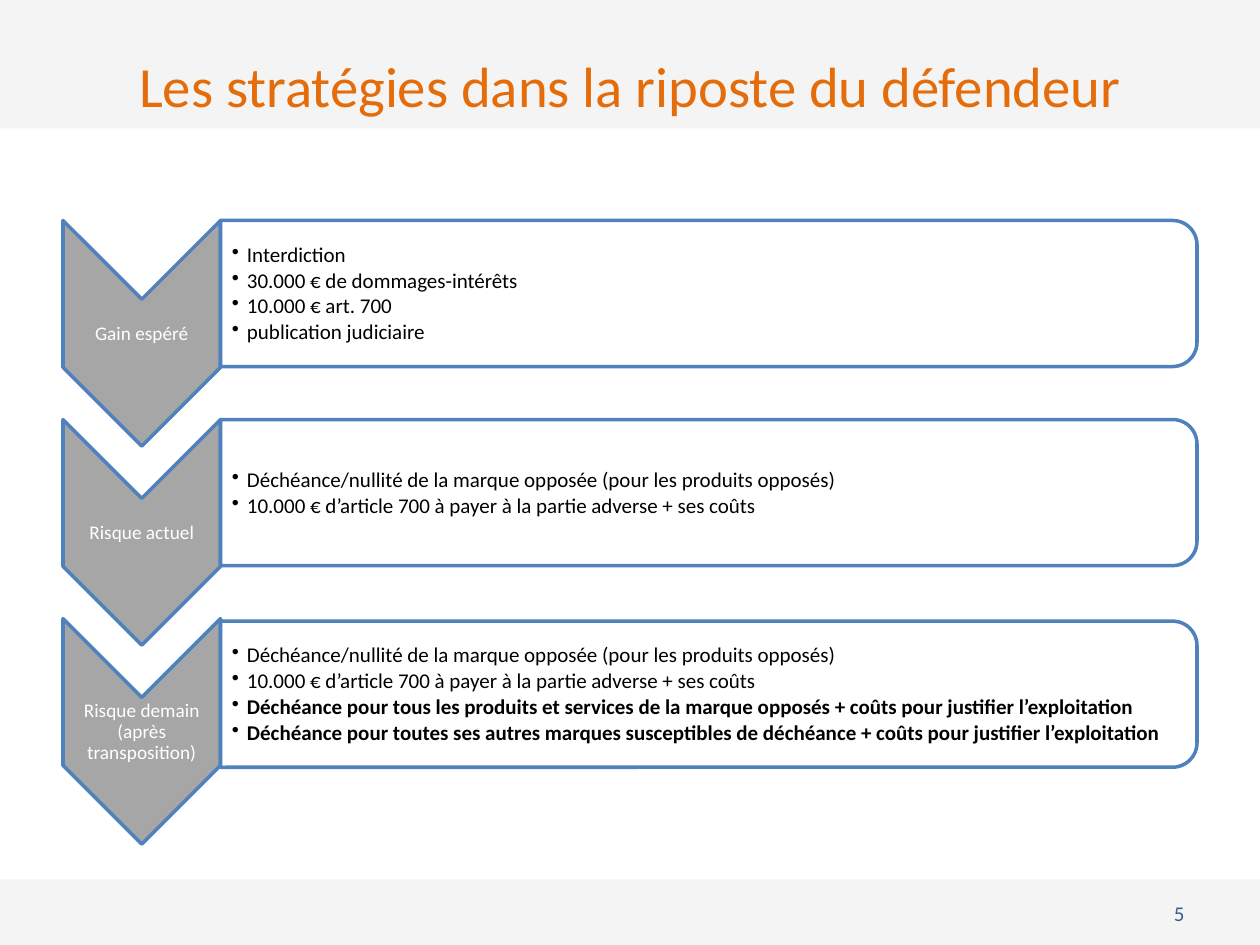
"""Build the slide on the defendant's strategies: three stages, each with its points."""
from dataclasses import dataclass

from lxml.etree import SubElement
from pptx import Presentation
from pptx.dml.color import RGBColor
from pptx.enum.shapes import MSO_SHAPE
from pptx.enum.text import MSO_ANCHOR, PP_ALIGN
from pptx.oxml.ns import qn
from pptx.util import Emu, Inches, Pt

SLIDE_W, SLIDE_H = Inches(10), Inches(7.5)
COLUMN, ROW = SLIDE_W / 40, SLIDE_H / 30
FONT = "Calibri"

WHITE = RGBColor(0xFF, 0xFF, 0xFF)
BLACK = RGBColor(0x00, 0x00, 0x00)
ORANGE = RGBColor(0xE4, 0x6C, 0x0A)
NAVY = RGBColor(0x37, 0x60, 0x92)
BLUE = RGBColor(0x4F, 0x81, 0xBD)
GREY = RGBColor(0xA6, 0xA6, 0xA6)
BAND_GREY = RGBColor(0xEA, 0xEA, 0xEA)

FIRST_STAGE_ROW, STAGE_PITCH = 7, 6.32


@dataclass(frozen=True)
class Area:
    column: float
    row: float
    columns: float
    rows: float

    def emu(self) -> tuple[Emu, Emu, Emu, Emu]:
        return (Emu(round(self.column * COLUMN)), Emu(round(self.row * ROW)),
                Emu(round(self.columns * COLUMN)), Emu(round(self.rows * ROW)))


@dataclass(frozen=True)
class TextStyle:
    size: float
    color: RGBColor
    align: PP_ALIGN = PP_ALIGN.LEFT
    line_spacing: float = 1.0
    space_after: float = 0
    bulleted: bool = False
    insets: tuple[float, float, float, float] = (0.1, 0.05, 0.1, 0.05)


@dataclass(frozen=True)
class Point:
    text: str
    bold: bool = False


@dataclass(frozen=True)
class Stage:
    label: str
    points: tuple[Point, ...]
    panel_shift: float = 0


TITLE = TextStyle(32.4, ORANGE, PP_ALIGN.CENTER)
PAGE_NUMBER = TextStyle(12, NAVY, PP_ALIGN.RIGHT)
LABEL = TextStyle(11, WHITE, PP_ALIGN.CENTER, 0.9, 3.85, insets=(0.01,) * 4)
POINTS = TextStyle(12, BLACK, PP_ALIGN.LEFT, 0.9, 1.8, True, (0.09, 0.01, 0.01, 0.01))

PRESENT_RISKS = (
    Point("Déchéance/nullité de la marque opposée (pour les produits opposés)"),
    Point("10.000 € d’article 700 à payer à la partie adverse + ses coûts"),
)
STAGES = (
    Stage("Gain espéré", (
        Point("Interdiction"),
        Point("30.000 € de dommages-intérêts"),
        Point("10.000 € art. 700"),
        Point("publication judiciaire"),
    )),
    Stage("Risque actuel", PRESENT_RISKS),
    Stage("Risque demain (après transposition)", PRESENT_RISKS + (
        Point("Déchéance pour tous les produits et services de la marque opposés"
              " + coûts pour justifier l’exploitation", True),
        Point("Déchéance pour toutes ses autres marques susceptibles de déchéance"
              " + coûts pour justifier l’exploitation", True),
    ), 0.08),
)


def add_figure(slide, preset: MSO_SHAPE, area: Area, fill: RGBColor, opacity: int = 100,
               outline: RGBColor | None = None, turned: bool = False) -> None:
    left, top, width, height = area.emu()
    if turned:
        left, top = left + (width - height) // 2, top + (height - width) // 2
        width, height = height, width
    figure = slide.shapes.add_shape(preset, left, top, width, height)
    figure.shadow.inherit = False
    figure.rotation = 90 if turned else 0
    figure.fill.solid()
    figure.fill.fore_color.rgb = fill
    if opacity < 100:
        tint = next(figure.element.spPr.iter(qn("a:srgbClr")))
        SubElement(tint, qn("a:alpha"), val=str(opacity * 1000))
    if outline is None:
        figure.line.fill.background()
    else:
        figure.line.color.rgb = outline
        figure.line.width = Pt(2)


def add_text(slide, area: Area, points: tuple[Point, ...], style: TextStyle) -> None:
    frame = slide.shapes.add_textbox(*area.emu()).text_frame
    frame.word_wrap = True
    frame.vertical_anchor = MSO_ANCHOR.MIDDLE
    (frame.margin_left, frame.margin_top,
     frame.margin_right, frame.margin_bottom) = map(Inches, style.insets)
    for index, point in enumerate(points):
        paragraph = frame.add_paragraph() if index else frame.paragraphs[0]
        paragraph.alignment = style.align
        paragraph.line_spacing = style.line_spacing
        paragraph.space_after = Pt(style.space_after)
        if style.bulleted:
            properties = paragraph._p.get_or_add_pPr()
            properties.set("marL", str(Inches(0.12)))
            properties.set("indent", str(-Inches(0.12)))
            SubElement(properties, qn("a:buChar"), char="•")
        run = paragraph.add_run()
        run.text = point.text
        run.font.name = FONT
        run.font.size = Pt(style.size)
        run.font.bold = point.bold
        run.font.color.rgb = style.color


def add_stage(slide, stage: Stage, row: float) -> None:
    panel_row = row + stage.panel_shift
    add_figure(slide, MSO_SHAPE.CHEVRON, Area(2, row, 5, 7.16), GREY,
               outline=BLUE, turned=True)
    add_text(slide, Area(2, row + 2.52, 5, 2.16), (Point(stage.label),), LABEL)
    add_figure(slide, MSO_SHAPE.ROUND_2_SAME_RECTANGLE, Area(7, panel_row, 31, 4.64),
               WHITE, 90, BLUE, True)
    add_text(slide, Area(7, panel_row + 0.24, 30.76, 4.2), stage.points, POINTS)


def main() -> None:
    deck = Presentation()
    deck.slide_width, deck.slide_height = SLIDE_W, SLIDE_H
    slide = deck.slides.add_slide(deck.slide_layouts[6])
    for band in (Area(0, 27.92, 40, 2.08), Area(0, 0, 40, 4.08)):
        add_figure(slide, MSO_SHAPE.RECTANGLE, band, BAND_GREY, 50)
    add_text(slide, Area(2, 1.68, 36, 2),
             (Point("Les stratégies dans la riposte du défendeur"),), TITLE)
    add_text(slide, Area(28.68, 28.2, 9.32, 1.6), (Point("5"),), PAGE_NUMBER)
    for order, stage in enumerate(STAGES):
        add_stage(slide, stage, FIRST_STAGE_ROW + order * STAGE_PITCH)
    deck.save("out.pptx")


if __name__ == "__main__":
    main()
